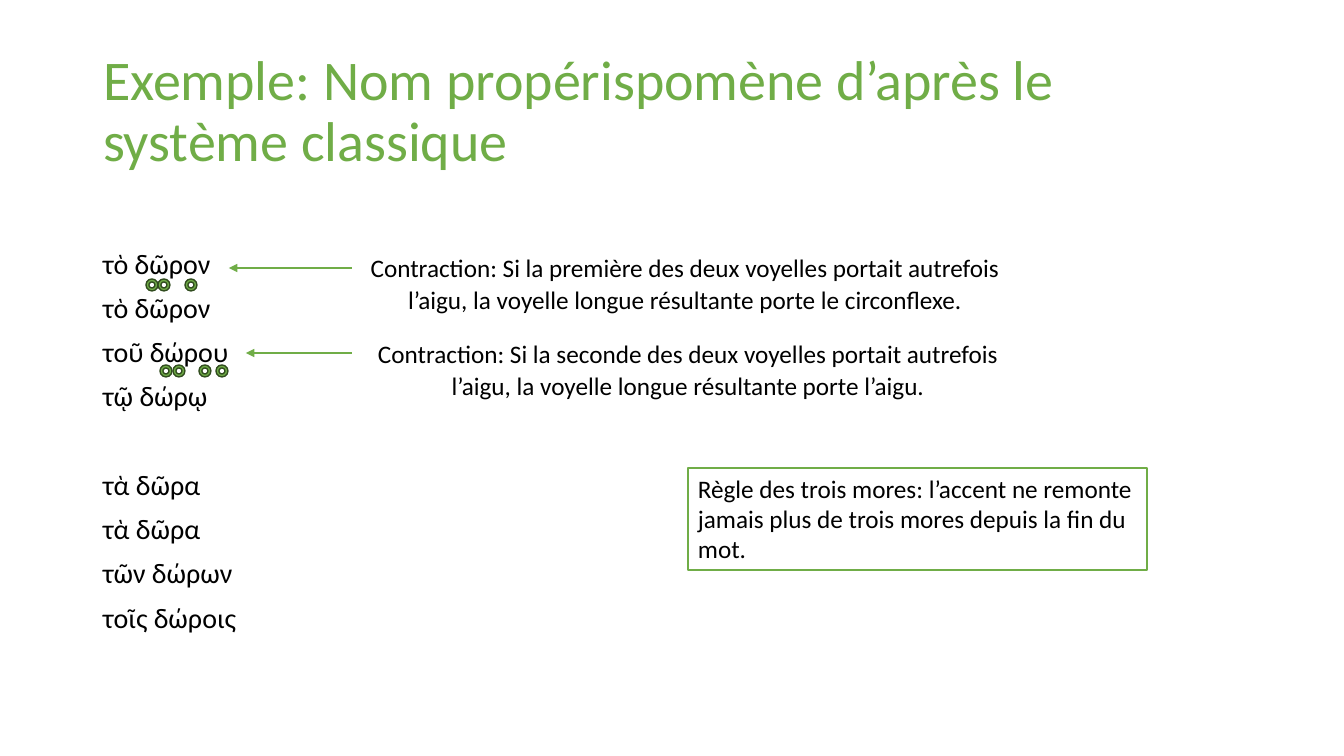
from lxml.etree import SubElement
from pptx import Presentation
from pptx.dml.color import RGBColor
from pptx.enum.shapes import MSO_CONNECTOR, MSO_SHAPE
from pptx.enum.text import MSO_ANCHOR, MSO_AUTO_SIZE, PP_ALIGN
from pptx.oxml.ns import qn
from pptx.util import Pt

GREEN, DARK, BLACK, WHITE = "70AD47", "314C1F", "000000", "FFFFFF"
LEFT, MID = PP_ALIGN.LEFT, PP_ALIGN.CENTER

TITLE = "Exemple: Nom propérispomène d’après le système classique"
FORMS = [
    ["τὸ δῶρον", "τὸ δῶρον", "τοῦ δώρου", "τῷ δώρῳ"],
    ["τὰ δῶρα", "τὰ δῶρα", "τῶν δώρων", "τοῖς δώροις"],
]
RULE = ("Règle des trois mores: l’accent ne remonte jamais plus de trois "
        "mores depuis la fin du mot.")
NOTES = [
    ((349, 245, 672, 74),
     "Contraction: Si la première des deux voyelles portait autrefois "
     "l’aigu, la voyelle longue résultante porte le circonflexe."),
    ((352, 331, 672, 74),
     "Contraction: Si la seconde des deux voyelles portait autrefois "
     "l’aigu, la voyelle longue résultante porte l’aigu."),
]
MORAE = {279: [146, 158, 185], 365: [160, 173, 199, 216]}
RING = 12
ARROWS = [(352, 229, 268), (352, 246, 353)]  # from x, to x, y
GAP, BREAK = 10, 41.6  # points before a form, and before the plural


def px(*sizes):
    return [round(size * 914400 / 100.8) for size in sizes]


def color(code):
    return RGBColor.from_string(code)


def style(item, **values):
    for name, value in values.items():
        setattr(item, name, value)


def paint(shape, fill, line):
    shape.fill.solid()
    shape.fill.fore_color.rgb = color(fill)
    shape.line.color.rgb = color(line)
    shape.line.width = Pt(1)


def write(shape, lines, size, ink=BLACK, align=LEFT, space=1.0,
          anchor=MSO_ANCHOR.TOP):
    """Fill a shape with (text, points before) lines."""
    frame = shape.text_frame
    style(frame, word_wrap=True, auto_size=MSO_AUTO_SIZE.NONE,
          vertical_anchor=anchor)
    for i, (text, before) in enumerate(lines):
        para = frame.add_paragraph() if i else frame.paragraphs[0]
        style(para, text=text, alignment=align, line_spacing=space,
              space_before=Pt(before))
        style(para.font, name="Calibri", size=Pt(size))
        para.font.color.rgb = color(ink)


deck = Presentation()
deck.slide_width, deck.slide_height = px(1344, 756)
slide = deck.slides.add_slide(deck.slide_layouts[5])
shapes = slide.shapes

title = shapes.title
title.left, title.top, title.width, title.height = px(93, 40, 1159, 146)
write(title, [(TITLE, 0)], 40, GREEN, space=0.9, anchor=MSO_ANCHOR.MIDDLE)

lines = []
for group in FORMS:
    for i, form in enumerate(group):
        before = GAP if i else BREAK if lines else 0
        lines.append((form, before))
write(shapes.add_textbox(*px(93, 245, 1159, 435)), lines, 20, space=0.9)

rule = shapes.add_textbox(*px(688, 468, 459, 102))
paint(rule, WHITE, GREEN)
write(rule, [(RULE, 0)], 18)

for y, row in MORAE.items():
    for x in row:
        ring = shapes.add_shape(MSO_SHAPE.DONUT, *px(x, y, RING, RING))
        ring.shadow.inherit = False
        paint(ring, GREEN, DARK)

for box, text in NOTES:
    write(shapes.add_textbox(*px(*box)), [(text, 0)], 18, align=MID,
          space=1.07)

for start, end, y in ARROWS:
    arrow = shapes.add_connector(MSO_CONNECTOR.STRAIGHT,
                                 *px(start, y, end, y))
    arrow.line.color.rgb = color(GREEN)
    arrow.line.width = Pt(1)
    SubElement(arrow.line._get_or_add_ln(), qn("a:tailEnd"), type="triangle")
    SubElement(arrow._element.spPr, qn("a:effectLst"))

deck.save("out.pptx")
